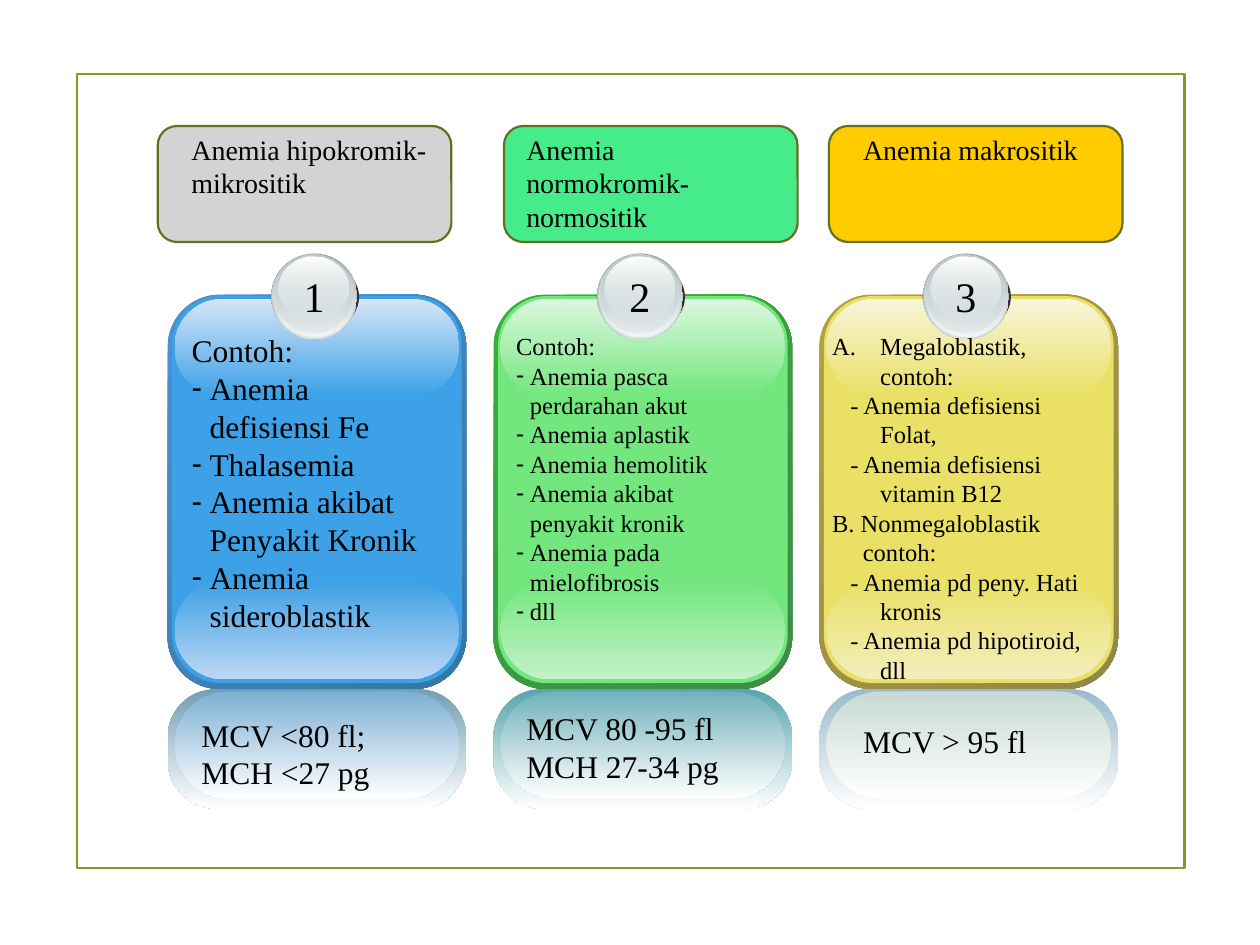
from lxml.etree import SubElement as add_element
from pptx import Presentation
from pptx.dml.color import RGBColor
from pptx.enum.shapes import MSO_SHAPE as Preset
from pptx.enum.text import MSO_ANCHOR as Anchor, MSO_AUTO_SIZE as AutoSize, PP_ALIGN as Align
from pptx.oxml.ns import qn
from pptx.util import Cm, Pt

BLACK = RGBColor(0x00, 0x00, 0x00)
WHITE = RGBColor(0xFF, 0xFF, 0xFF)
FRAME_GREEN = RGBColor(0x83, 0x99, 0x2A)
HEADING_LINE = RGBColor(0x61, 0x71, 0x1F)
DISC_SHADOW = RGBColor(0x33, 0x33, 0x33)
DISC_RIM = RGBColor(0x99, 0xA1, 0xA2)
DISC_GREY = RGBColor(0xC1, 0xCB, 0xCC)
DISC_LIGHT = RGBColor(0xD6, 0xE1, 0xE2)
DISC_PALE = RGBColor(0xF2, 0xF5, 0xF5)
GREY = RGBColor(0xD3, 0xD3, 0xD3)
MINT = RGBColor(0x46, 0xEC, 0x89)
AMBER = RGBColor(0xFF, 0xCC, 0x00)
BLUE = RGBColor(0x3C, 0xA1, 0xE6)
BLUE_EDGE = (RGBColor(0x4E, 0x91, 0xD4), RGBColor(0x34, 0x77, 0xA4))
BLUE_GLOSS = (RGBColor(0xD7, 0xE5, 0xF7), RGBColor(0xBD, 0xD6, 0xF3))
BLUE_MIRROR = (RGBColor(0x72, 0x9E, 0xB4), RGBColor(0x7D, 0xAF, 0xD4))
GREEN = RGBColor(0x73, 0xE7, 0x7E)
GREEN_EDGE = (RGBColor(0x34, 0xB0, 0x34), RGBColor(0x3F, 0x8B, 0x4A))
GREEN_GLOSS = (RGBColor(0xDD, 0xF7, 0xDF), RGBColor(0xC3, 0xF2, 0xC7))
GREEN_MIRROR = (RGBColor(0x58, 0xA4, 0xAE), RGBColor(0x72, 0xB2, 0xBB))
YELLOW = RGBColor(0xE9, 0xE0, 0x65)
YELLOW_EDGE = (RGBColor(0xB5, 0x9F, 0x43), RGBColor(0x8F, 0x88, 0x49))
YELLOW_GLOSS = (RGBColor(0xF8, 0xF5, 0xDB), RGBColor(0xF3, 0xEE, 0xBB))
YELLOW_MIRROR = (RGBColor(0x99, 0xBA, 0xCC), RGBColor(0xC8, 0xDA, 0xD4))

CARD_LEFT, CARD_PITCH = 3.38, 6.57
FONT = "Times New Roman"


def dashed(size, *lines):
    """Return list rows where a line with a dash in front gets a hanging bullet."""
    step = 0.02 * size
    rows = [("Contoh:", 0, 0, None)]
    for line in lines:
        bullet = line.startswith("* ")
        rows.append((line.removeprefix("* "), step, -step if bullet else 0, "-" if bullet else None))
    return rows


COLUMNS = [
    {"heading": ("Anemia hipokromik-mikrositik", 3.18, 3.61, GREY),
     "face": BLUE, "edge": BLUE_EDGE, "gloss": BLUE_GLOSS, "mirror": BLUE_MIRROR,
     "list": (0.23, 5.72, 18, dashed(
         18, "* Anemia", "defisiensi Fe", "* Thalasemia", "* Anemia akibat",
         "Penyakit Kronik", "* Anemia", "sideroblastik")),
     "index": ("MCV <80 fl; MCH <27 pg", 3.81, 14.3)},
    {"heading": ("Anemia normokromik-normositik", 10.16, 10.36, MINT),
     "face": GREEN, "edge": GREEN_EDGE, "gloss": GREEN_GLOSS, "mirror": GREEN_MIRROR,
     "list": (0.2, 5.72, 14, dashed(
         14, "* Anemia pasca", "perdarahan akut", "* Anemia aplastik", "* Anemia hemolitik",
         "* Anemia akibat", "penyakit kronik", "* Anemia pada", "mielofibrosis", "* dll")),
     "index": ("MCV 80 -95 fl MCH 27-34 pg", 10.36, 14.17)},
    {"heading": ("Anemia makrositik", 16.71, 17.15, AMBER),
     "face": YELLOW, "edge": YELLOW_EDGE, "gloss": YELLOW_GLOSS, "mirror": YELLOW_MIRROR,
     "list": (0, 5.92, 14, [
         ("Megaloblastik, contoh:", 0.97, -0.97, "A."),
         ("- Anemia defisiensi Folat,", 0.97, -0.6, None),
         ("- Anemia defisiensi vitamin B12", 0.97, -0.6, None),
         ("B. Nonmegaloblastik", 0.97, -0.97, None),
         ("contoh:", 0.62, 0, None),
         ("- Anemia pd peny. Hati kronis", 0.97, -0.6, None),
         ("- Anemia pd hipotiroid, dll", 0.97, -0.6, None)]),
     "index": ("MCV > 95 fl", 17.15, 14.43)},
]

DISC_LAYERS = [
    ((2.08, 5.26, 1.78, 1.45), DISC_SHADOW, None),
    ((2.09, 5.11, 1.73, 1.73), (DISC_RIM, DISC_LIGHT), None),
    ((2.11, 5.1, 1.68, 1.68), (DISC_LIGHT, DISC_PALE), (0, 100)),
    ((2.13, 5.13, 1.6, 1.57), (DISC_GREY, DISC_LIGHT), (100, 48)),
    ((2.23, 5.18, 1.42, 1.27), (WHITE, DISC_LIGHT), (100, 38)),
]


def apply(target, values):
    """Set each attribute of the target from a dict."""
    for name, value in values.items():
        setattr(target, name, value)


def place(shape, box):
    """Put a shape at left, top, width, height in centimetres."""
    apply(shape, dict(zip(("left", "top", "width", "height"), map(Cm, box))))


def add_panel(slide, preset, box, fill=None, line=None, corner=None, angle=90, opacity=None):
    """Add a shape with no fill, a plain fill or a two-colour gradient."""
    shape = slide.shapes.add_shape(preset, *map(Cm, box))
    shape.shadow.inherit = False
    if corner is not None:
        shape.adjustments[0] = corner
    if fill is None:
        shape.fill.background()
    elif isinstance(fill, RGBColor):
        shape.fill.solid()
        shape.fill.fore_color.rgb = fill
    else:
        shape.fill.gradient()
        shape.fill.gradient_angle = 360 - angle
        for stop, color, position in zip(shape.fill.gradient_stops, fill, (0, 1)):
            apply(stop, {"position": position})
            stop.color.rgb = color
        if opacity:
            for color, percent in zip(shape.element.spPr.iter(qn("a:srgbClr")), opacity):
                add_element(color, qn("a:alpha"), val=str(percent * 1000))
    if line is None:
        shape.line.fill.background()
    else:
        shape.line.color.rgb = line
        shape.line.width = Pt(1.25)


def add_run(paragraph, text, size):
    """Add black text to a paragraph."""
    run = paragraph.add_run()
    run.text = text
    apply(run.font, {"name": FONT, "size": Pt(size), "bold": False})
    run.font.color.rgb = BLACK


def add_label(slide, text, box, size, align=Align.LEFT, wrap=True):
    """Add a text box with one paragraph."""
    label = slide.shapes.add_textbox(*map(Cm, box))
    label.text_frame.word_wrap = wrap
    paragraph = label.text_frame.paragraphs[0]
    paragraph.alignment = align
    add_run(paragraph, text, size)


def fill_list(slide, placeholder, box, size, rows):
    """Move a body placeholder to the front and write the list in it."""
    slide.shapes.element.append(placeholder.element)
    place(placeholder, box)
    frame = placeholder.text_frame
    apply(frame, {"word_wrap": True, "auto_size": AutoSize.NONE, "vertical_anchor": Anchor.TOP})
    for number, (text, margin, indent, bullet) in enumerate(rows):
        paragraph = frame.add_paragraph() if number else frame.paragraphs[0]
        apply(paragraph, {"alignment": Align.LEFT, "line_spacing": 1.0,
                          "space_before": Pt(0), "space_after": Pt(0)})
        properties = paragraph._p.get_or_add_pPr()
        properties.set("marL", str(Cm(margin)))
        properties.set("indent", str(Cm(indent)))
        if bullet == "A.":
            add_element(properties, qn("a:buAutoNum"), type="alphaUcPeriod")
        elif bullet:
            add_element(properties, qn("a:buChar"), char=bullet)
        else:
            add_element(properties, qn("a:buNone"))
        add_run(paragraph, text, size)


def add_card(slide, number, column, placeholder):
    """Add a numbered glossy card with its list and its mirror."""
    left = CARD_LEFT + CARD_PITCH * (number - 1)
    face, (light, glow), (outer, inner) = column["face"], column["gloss"], column["mirror"]
    layers = [
        ((0, 5.94, 6.02, 7.95), column["edge"], 0.175, 45),
        ((0.09, 5.97, 5.84, 7.8), face, 0.167, 90),
        ((0.14, 11.71, 5.74, 1.98), (face, glow), 0.5, 90),
        ((0.14, 6.02, 5.74, 1.96), (light, face), 0.5, 90),
        ((0, 13.89, 6.02, 2.41), (outer, WHITE), 0.404, 90),
        ((0.14, 13.94, 5.74, 2.16), (inner, WHITE), 0.5, 90),
    ]
    for (offset, *rest), fill, corner, angle in layers:
        add_panel(slide, Preset.ROUNDED_RECTANGLE, (left + offset, *rest), fill,
                  corner=corner, angle=angle)
    for (offset, *rest), fill, opacity in DISC_LAYERS:
        add_panel(slide, Preset.OVAL, (left + offset, *rest), fill, opacity=opacity)
    add_label(slide, str(number), (left + 2.49, 5.33, 0.91, 1.3), 24, Align.CENTER, False)
    offset, width, size, rows = column["list"]
    fill_list(slide, placeholder, (left + offset, 6.55, width, 7.19), size, rows)


def main():
    """Build the slide and save it."""
    presentation = Presentation()
    apply(presentation, {"slide_width": Cm(25.4), "slide_height": Cm(19.05)})
    slide = presentation.slides.add_slide(presentation.slide_layouts[4])
    title, *bodies = list(slide.placeholders)[:4]
    for placeholder in list(slide.placeholders):
        if placeholder.placeholder_format.idx not in (1, 2, 3):
            placeholder.element.getparent().remove(placeholder.element)
    add_panel(slide, Preset.RECTANGLE, (1.55, 1.5, 22.33, 16), line=FRAME_GREEN)
    for number, (column, body) in enumerate(zip(COLUMNS, bodies), 1):
        add_card(slide, number, column, body)
    for column in COLUMNS:
        heading, box_left, text_left, color = column["heading"]
        add_panel(slide, Preset.ROUNDED_RECTANGLE, (box_left, 2.54, 5.92, 2.34), color, HEADING_LINE)
        add_label(slide, heading, (text_left, 2.54, 5.28, 2.3), 16)
        index, index_left, index_top = column["index"]
        add_label(slide, index, (index_left, index_top, 5.28, 1.8), 18)
    presentation.save("out.pptx")


if __name__ == "__main__":
    main()
